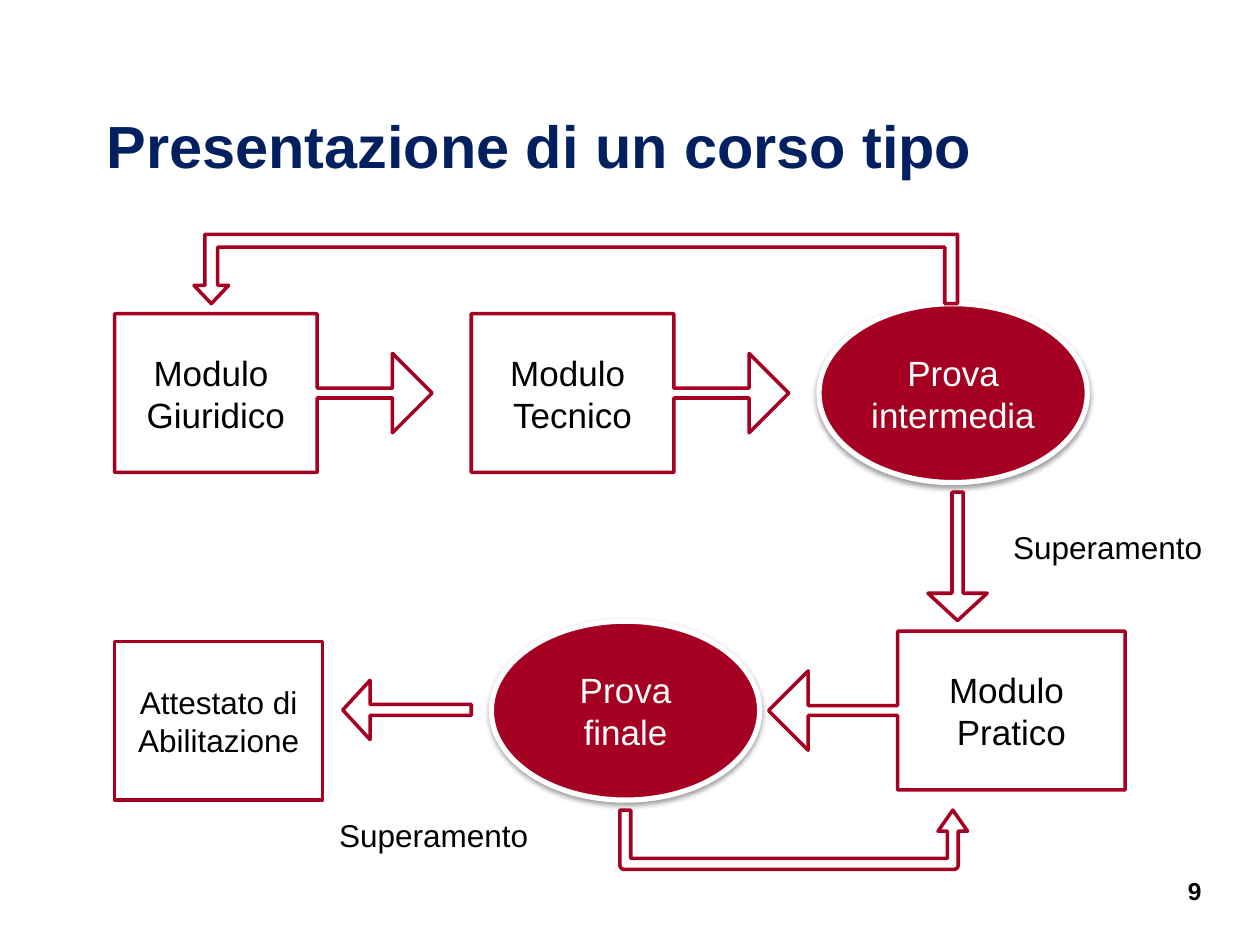
from lxml import etree
from pptx import Presentation
from pptx import util as u
from pptx.dml.color import RGBColor
from pptx.enum import shapes, text
from pptx.oxml.ns import qn

SHAPE = shapes.MSO_SHAPE
ALIGN = text.PP_ALIGN
ANCHOR = text.MSO_ANCHOR
COLORS = {"red": "A50021", "white": "FFFFFF", "navy": "002060", "black": "000000"}
CELL = u.Inches(0.1)  # the slide is a grid of 100 columns by 75 rows
CALLOUT = (0.062, 0.25, 0.25, 0.638)
ARROW = (0.186, 0.461)


def color(name):
    return RGBColor.from_string(COLORS[name])


def cells(*counts):
    return [round(count * CELL) for count in counts]


def write(box, lines, size, ink, align=ALIGN.CENTER, anchor=ANCHOR.MIDDLE, bold=False):
    frame = box.text_frame
    frame.word_wrap = True
    frame.vertical_anchor = anchor
    for index, line in enumerate(lines):
        para = frame.add_paragraph() if index else frame.paragraphs[0]
        para.alignment = align
        span = para.add_run()
        span.text = line
        span.font.name = "Arial"
        span.font.size = u.Pt(size)
        span.font.bold = bold
        span.font.color.rgb = color(ink)


def add_label(page, area, words, size, ink="black", **style):
    box = page.shapes.add_textbox(*cells(*area))
    write(box, [words], size, ink, **style)


def add_outline(page, kind, area, ratios=(), fill="white", line="red", width=2):
    shape = page.shapes.add_shape(kind, *cells(*area))
    for index, ratio in enumerate(ratios):
        shape.adjustments[index] = ratio
    shape.shadow.inherit = False
    shape.fill.solid()
    shape.fill.fore_color.rgb = color(fill)
    shape.line.color.rgb = color(line)
    shape.line.width = u.Pt(width)
    return shape


def add_box(page, kind, area, lines, size=20, ratios=()):
    write(add_outline(page, kind, area, ratios), lines, size, "black")


def add_test(page, left, top, words):
    """Draw a red oval with a white rim and a soft shadow below it."""
    oval = add_outline(page, SHAPE.FLOWCHART_CONNECTOR, (left, top, 21.3, 14.2),
                       fill="red", line="white", width=3)
    effects = oval._element.spPr.find(qn("a:effectLst"))
    shadow = etree.SubElement(effects, qn("a:outerShdw"), blurRad=str(u.Pt(3.1)),
                              dist=str(u.Pt(1.6)), dir="5400000", rotWithShape="0")
    tint = etree.SubElement(shadow, qn("a:srgbClr"), val=COLORS["black"])
    etree.SubElement(tint, qn("a:alpha"), val="38000")
    write(oval, [words], 20, "white")


def add_return(page, area, ratios, flip):
    """Draw a U-turn arrow mirrored by flipH or flipV."""
    arrow = add_outline(page, SHAPE.U_TURN_ARROW, area, ratios)
    arrow._element.spPr.find(qn("a:xfrm")).set(flip, "1")


def main():
    deck = Presentation()
    deck.slide_width, deck.slide_height = cells(100, 75)
    page = deck.slides.add_slide(deck.slide_layouts[6])

    add_label(page, (93.3, 69, 8.7, 3.3), "9", 14, bold=True,
              align=ALIGN.LEFT, anchor=ANCHOR.TOP)
    add_label(page, (7.5, 5.2, 76.4, 12.5), "Presentazione di un corso tipo", 34,
              "navy", bold=True, align=ALIGN.LEFT)

    add_test(page, 65, 24.1, "Prova intermedia")
    for column, topic in enumerate(("Giuridico", "Tecnico")):
        add_box(page, SHAPE.RIGHT_ARROW_CALLOUT, (9.1 + 28.3 * column, 24.9, 25.2, 12.6),
                ("Modulo ", topic), ratios=CALLOUT)
    add_outline(page, SHAPE.DOWN_ARROW, (73.65, 39.05, 4.7, 10.2), ARROW)
    add_box(page, SHAPE.LEFT_ARROW_CALLOUT, (61, 50.1, 28.3, 12.6),
            ("Modulo ", "Pratico"), ratios=CALLOUT)
    add_test(page, 39, 49.3, "Prova finale")
    add_outline(page, SHAPE.LEFT_ARROW, (27.2, 54, 10.2, 4.7), ARROW)
    add_box(page, SHAPE.RECTANGLE, (9.1, 50.9, 16.5, 12.6),
            ["Attestato di Abilitazione"], size=18)

    add_return(page, (15.4, 18.6, 60.6, 5.5), (0.184, 0.25, 0.263, 0.009, 1), "flipH")
    add_return(page, (49.2, 64.3, 27.6, 4.7), (0.184, 0.25, 0.356, 0.067, 1), "flipV")
    for left, top in ((78.3, 41.4), (24.8, 64.3)):
        add_label(page, (left, top, 18.1, 4), "Superamento", 18,
                  align=ALIGN.RIGHT, anchor=ANCHOR.TOP)

    deck.save("out.pptx")


if __name__ == "__main__":
    main()
